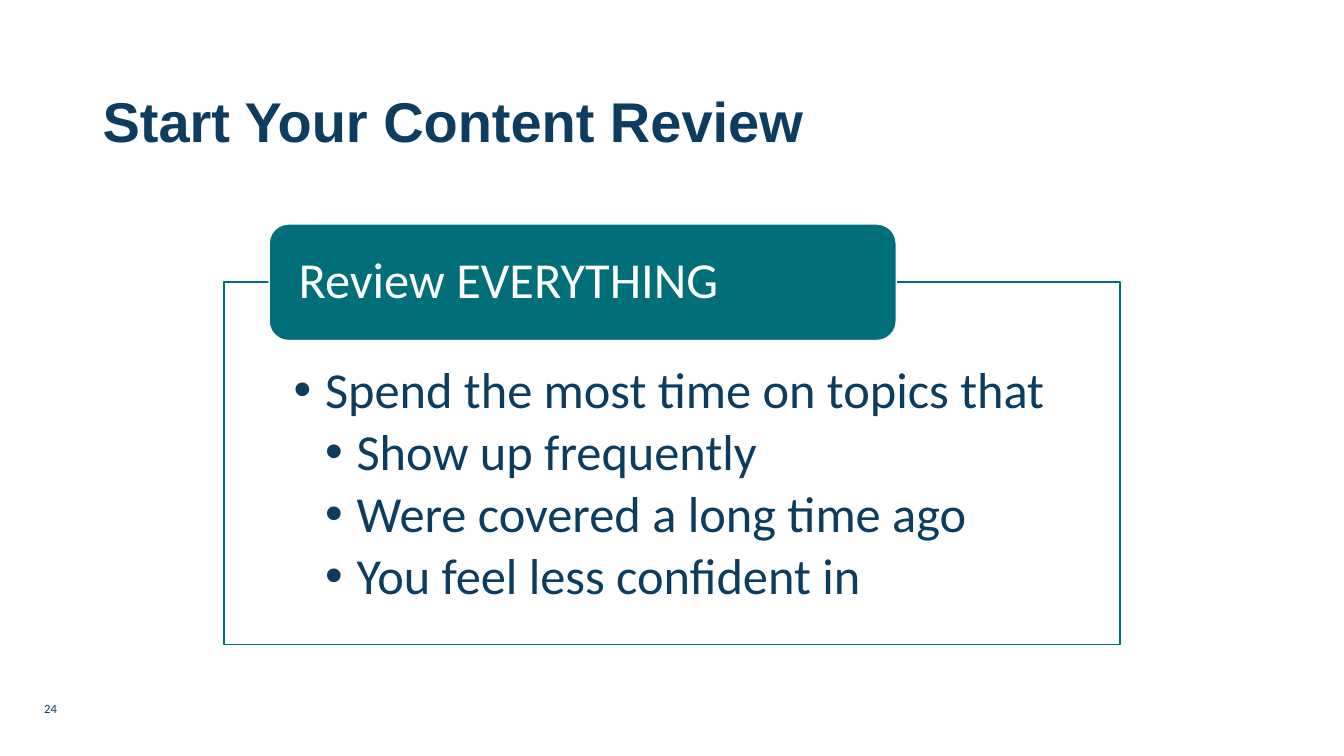
import dataclasses

import lxml.etree
import pptx
import pptx.dml.color
import pptx.enum.shapes
import pptx.enum.text
import pptx.oxml.ns
import pptx.util

Pt = pptx.util.Pt
SHAPES = pptx.enum.shapes.MSO_SHAPE
ANCHORS = pptx.enum.text.MSO_ANCHOR


@dataclasses.dataclass(frozen=True)
class Theme:
    navy: str = "0C3C60"
    teal: str = "006F79"
    white: str = "FFFFFF"
    heading_font: str = "Arial"
    body_font: str = "Calibri"
    title_size: float = 40
    body_size: float = 36
    number_size: float = 9
    line_spacing: float = 0.9
    indent_step: float = 22.5


THEME = Theme()


def color(value):
    return pptx.dml.color.RGBColor.from_string(value)


def apply_format(target, values):
    for name, value in values.items():
        setattr(target, name, value)


def add_bullet(para, level):
    properties = para._p.get_or_add_pPr()
    properties.set("marL", str(Pt(THEME.indent_step * level)))
    properties.set("indent", str(-Pt(THEME.indent_step)))
    font = lxml.etree.SubElement(properties, pptx.oxml.ns.qn("a:buFont"))
    font.set("typeface", THEME.heading_font)
    mark = lxml.etree.SubElement(properties, pptx.oxml.ns.qn("a:buChar"))
    mark.set("char", "•")


def write_text(box, lines, font, insets, anchor=ANCHORS.TOP, bullets=False, gap=0):
    frame = box.text_frame
    sides = ("margin_left", "margin_top", "margin_right", "margin_bottom")
    apply_format(frame, dict(zip(sides, map(Pt, insets))))
    apply_format(frame, {"word_wrap": True, "vertical_anchor": anchor})
    for index, (level, words) in enumerate(lines):
        para = frame.paragraphs[0] if index == 0 else frame.add_paragraph()
        if bullets:
            add_bullet(para, level)
        apply_format(para, {
            "alignment": pptx.enum.text.PP_ALIGN.LEFT,
            "line_spacing": THEME.line_spacing,
            "space_after": Pt(gap),
            "level": level - 1,
        })
        span = para.add_run()
        span.text = words
        apply_format(span.font, {
            "name": font["name"],
            "size": Pt(font["size"]),
            "bold": font.get("bold", False),
        })
        span.font.color.rgb = color(font["color"])


def add_label(page, place, words, font, anchor=ANCHORS.TOP):
    box = page.shapes.add_textbox(*map(Pt, place))
    write_text(box, [(1, words)], font, (7.2, 3.6, 7.2, 3.6), anchor)


def add_panel(page, kind, place, fill, line):
    panel = page.shapes.add_shape(kind, *map(Pt, place))
    panel.shadow.inherit = False
    panel.fill.solid()
    panel.fill.fore_color.rgb = color(fill)
    panel.line.color.rgb = color(line)
    panel.line.width = Pt(1)
    return panel


def main():
    deck = pptx.Presentation()
    apply_format(deck, {"slide_width": Pt(960), "slide_height": Pt(540)})
    page = deck.slides.add_slide(deck.slide_layouts[6])

    title_font = {"name": THEME.heading_font, "size": THEME.title_size,
                  "color": THEME.navy, "bold": True}
    number_font = {"name": THEME.body_font, "size": THEME.number_size, "color": THEME.navy}
    body_font = {"name": THEME.body_font, "size": THEME.body_size, "color": THEME.navy}
    header_font = {**body_font, "color": THEME.white}

    add_label(page, (66.25, 53.25, 828, 70.5), "Start Your Content Review",
              title_font, ANCHORS.MIDDLE)
    add_label(page, (24.5, 498.25, 162, 16.5), "24", number_font)

    topics = [
        (1, "Spend the most time on topics that"),
        (2, "Show up frequently"),
        (2, "Were covered a long time ago"),
        (2, "You feel less confident in"),
    ]
    panel = add_panel(page, SHAPES.RECTANGLE, (160, 201.5, 640, 259),
                      THEME.white, THEME.teal)
    write_text(panel, topics, body_font, (49.7, 59, 49.7, 20), bullets=True, gap=5.4)

    header = add_panel(page, SHAPES.ROUNDED_RECTANGLE, (192.25, 160, 448, 83.25),
                       THEME.teal, THEME.white)
    write_text(header, [(1, "Review EVERYTHING")], header_font, (17, 0, 17, 0),
               ANCHORS.MIDDLE)

    deck.save("out.pptx")


if __name__ == "__main__":
    main()
